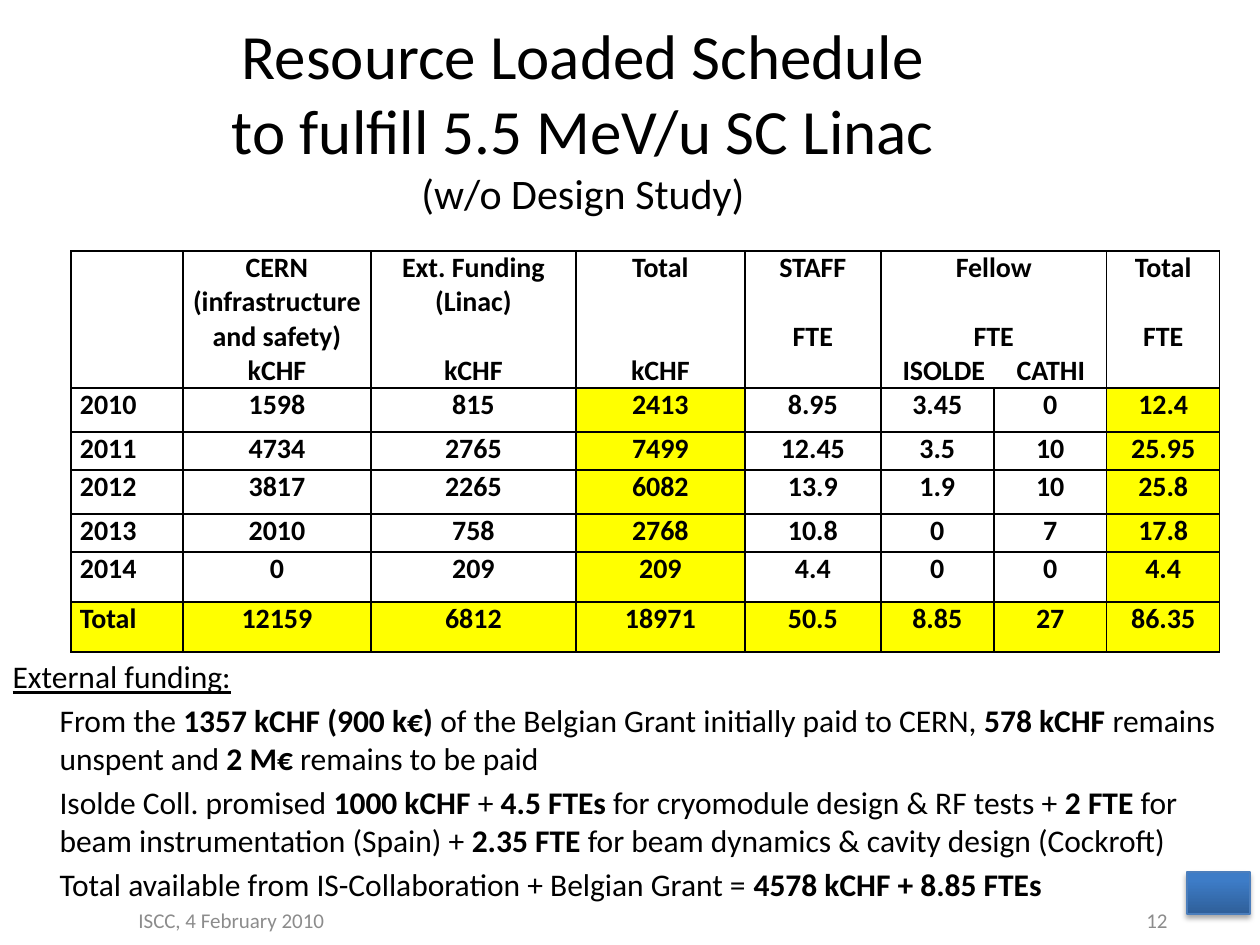
from lxml import etree
from pptx import Presentation
from pptx.dml.color import RGBColor
from pptx.enum.shapes import MSO_SHAPE
from pptx.enum.text import MSO_ANCHOR, MSO_AUTO_SIZE, PP_ALIGN
from pptx.oxml.ns import qn
from pptx.util import Emu, Pt

BUTTON = MSO_SHAPE.ACTION_BUTTON_CUSTOM
MIDDLE, TOP = MSO_ANCHOR.MIDDLE, MSO_ANCHOR.TOP
NO_FIT = MSO_AUTO_SIZE.NONE
CENTER, LEFT = PP_ALIGN.CENTER, PP_ALIGN.LEFT

FONT = "Calibri"
COLORS = {
    "text": "000000",
    "muted": "8C8C8C",
    "highlight": "FFFF00",
    "button_dark": "2F5F99",
    "button_light": "3D7CC7",
    "button_line": "4B7EBC",
}
TABLE_LINE_HEIGHT = 19.5
COLUMN_WIDTHS = [112, 188, 205, 169, 136, 113, 113, 113]
ROW_HEIGHTS = [137, 44, 38, 44, 38, 50, 50]
TOTAL_COLUMNS = (3, 7)

HEADERS = {
    1: [("CERN", 0), ("(infrastructure and safety)", 0), ("kCHF", 0)],
    2: [("Ext. Funding", 0), ("(Linac)", 0), ("kCHF", 1)],
    3: [("Total", 0), ("kCHF", 2)],
    4: [("STAFF", 0), ("FTE", 1)],
    5: [("Fellow", 0), ("FTE", 1), ("\tISOLDE\tCATHI", 0)],
    7: [("Total", 0), ("FTE", 1)],
}
RESOURCES = [
    ["2010", "1598", "815", "2413", "8.95", "3.45", "0", "12.4"],
    ["2011", "4734", "2765", "7499", "12.45", "3.5", "10", "25.95"],
    ["2012", "3817", "2265", "6082", "13.9", "1.9", "10", "25.8"],
    ["2013", "2010", "758", "2768", "10.8", "0", "7", "17.8"],
    ["2014", "0", "209", "209", "4.4", "0", "0", "4.4"],
    ["Total", "12159", "6812", "18971", "50.5", "8.85", "27", "86.35"],
]
FUNDING_HEADING = "External funding:"
FUNDING_NOTES = [
    "From the *1357 kCHF (900 k€) *of the Belgian Grant initially paid to CERN,"
    "* 578 kCHF* remains unspent and *2 M€ *remains to be paid",
    "Isolde Coll. promised *1000 kCHF *+ *4.5 FTEs *for cryomodule design & RF tests + "
    "*2 FTE *for beam instrumentation (Spain) + "
    "*2.35 FTE *for beam dynamics & cavity design (Cockroft)",
    "Total available from IS-Collaboration + Belgian Grant = *4578 kCHF + 8.85 FTEs",
]


def px(count):
    return Emu(round(count * 914400 / 126))


def rgb(name):
    return RGBColor.from_string(COLORS[name])


def place(shape, left, top, width, height):
    shape.left, shape.top = px(left), px(top)
    shape.width, shape.height = px(width), px(height)


def format_span(span, size, color="text", bold=False):
    span.font.name = FONT
    span.font.size = Pt(size)
    span.font.bold = bold
    span.font.color.rgb = rgb(color)


def add_tab_stops(para, stops, kind):
    tab_list = etree.SubElement(para._p.get_or_add_pPr(), qn("a:tabLst"))
    for stop in stops:
        etree.SubElement(tab_list, qn("a:tab"), pos=str(px(stop)), algn=kind)


def fill_title(title):
    place(title, 63, 38, 1040, 158)
    frame = title.text_frame
    frame.text = "Resource Loaded Schedule\vto fulfill 5.5 MeV/u SC Linac\v(w/o Design Study)"
    frame.vertical_anchor = MIDDLE
    frame.auto_size = NO_FIT
    para = frame.paragraphs[0]
    para.alignment = CENTER
    for span, size in zip(para.runs, (36, 36, 24)):
        format_span(span, size)
    for line_break in para._p.findall(qn("a:br")):
        etree.SubElement(line_break, qn("a:rPr"), sz="3600")


def format_body_paragraph(para, margin):
    para.space_before = Pt(3.6)
    properties = para._p.get_or_add_pPr()
    properties.set("marL", str(px(margin)))
    properties.set("indent", "0")
    etree.SubElement(properties, qn("a:buNone"))


def fill_body(body):
    place(body, 0, 651, 1260, 284)
    frame = body.text_frame
    frame.text = FUNDING_HEADING
    frame.auto_size = NO_FIT
    frame.vertical_anchor = TOP
    heading = frame.paragraphs[0]
    format_body_paragraph(heading, 0)
    format_span(heading.runs[0], 18)
    heading.runs[0].font.underline = True
    for note in FUNDING_NOTES:
        para = frame.add_paragraph()
        format_body_paragraph(para, 47)
        for index, part in enumerate(note.split("*")):
            span = para.add_run()
            span.text = part
            format_span(span, 18, bold=index % 2 == 1)


def format_cell(cell, highlighted):
    cell.margin_left = cell.margin_right = px(9)
    cell.margin_top = cell.margin_bottom = 0
    properties = cell._tc.get_or_add_tcPr()
    for side in ("lnL", "lnR", "lnT", "lnB"):
        line = etree.SubElement(properties, qn(f"a:{side}"), w=str(Pt(1)))
        fill = etree.SubElement(line, qn("a:solidFill"))
        etree.SubElement(fill, qn("a:srgbClr"), val=COLORS["text"])
    if highlighted:
        cell.fill.solid()
        cell.fill.fore_color.rgb = rgb("highlight")
    else:
        cell.fill.background()


def write_cell(cell, lines, alignment):
    cell.text_frame.text = "\n".join(text for text, gap in lines)
    for para, (text, gap) in zip(cell.text_frame.paragraphs, lines):
        para.alignment = alignment
        if gap:
            para.space_before = Pt(gap * TABLE_LINE_HEIGHT)
        if "\t" in text:
            para.alignment = LEFT
            add_tab_stops(para, (54, 161), "ctr")
        for span in para.runs:
            format_span(span, 16, bold=True)


def add_resource_table(slide):
    frame = slide.shapes.add_table(
        len(ROW_HEIGHTS), len(COLUMN_WIDTHS), px(71), px(251),
        px(sum(COLUMN_WIDTHS)), px(sum(ROW_HEIGHTS)))
    table = frame.table
    table.first_row = table.horz_banding = False
    for column, width in zip(table.columns, COLUMN_WIDTHS):
        column.width = px(width)
    for row, height in zip(table.rows, ROW_HEIGHTS):
        row.height = px(height)
    table.cell(0, 5).merge(table.cell(0, 6))
    for column in range(len(COLUMN_WIDTHS)):
        format_cell(table.cell(0, column), False)
    for column, lines in HEADERS.items():
        write_cell(table.cell(0, column), lines, CENTER)
    for row, values in enumerate(RESOURCES, 1):
        for column, value in enumerate(values):
            cell = table.cell(row, column)
            format_cell(cell, row == len(RESOURCES) or column in TOTAL_COLUMNS)
            write_cell(cell, [(value, 0)], CENTER if column else LEFT)


def add_button(slide):
    button = slide.shapes.add_shape(BUTTON, px(1187), px(872), px(63), px(42))
    button.fill.gradient()
    button.fill.gradient_angle = 90
    stops = button.fill.gradient_stops
    for stop, color, position in zip(stops, ("button_dark", "button_light"), (0, 0.8)):
        stop.color.rgb = rgb(color)
        stop.position = position
    button.line.color.rgb = rgb("button_line")
    button.line.width = Pt(0.75)
    button.shadow.inherit = False
    effects = button._element.spPr.find(qn("a:effectLst"))
    shadow = etree.SubElement(
        effects, qn("a:outerShdw"), blurRad=str(Pt(3.1)), dist=str(Pt(1.8)),
        dir="5400000", rotWithShape="0")
    color = etree.SubElement(shadow, qn("a:srgbClr"), val=COLORS["text"])
    etree.SubElement(color, qn("a:alpha"), val="35000")


def add_footer(slide):
    box = slide.shapes.add_textbox(px(0), px(895), px(1260), px(50))
    frame = box.text_frame
    frame.word_wrap = True
    frame.vertical_anchor = MIDDLE
    frame.text = "\tISCC, 4 February 2010\t12"
    para = frame.paragraphs[0]
    add_tab_stops(para, (126, 1134), "l")
    format_span(para.runs[0], 12, "muted")


def main():
    deck = Presentation()
    deck.slide_width, deck.slide_height = px(1260), px(945)
    page = deck.slides.add_slide(deck.slide_layouts[1])
    fill_body(page.placeholders[1])
    fill_title(page.shapes.title)
    add_resource_table(page)
    add_button(page)
    add_footer(page)
    deck.save("out.pptx")


if __name__ == "__main__":
    main()
